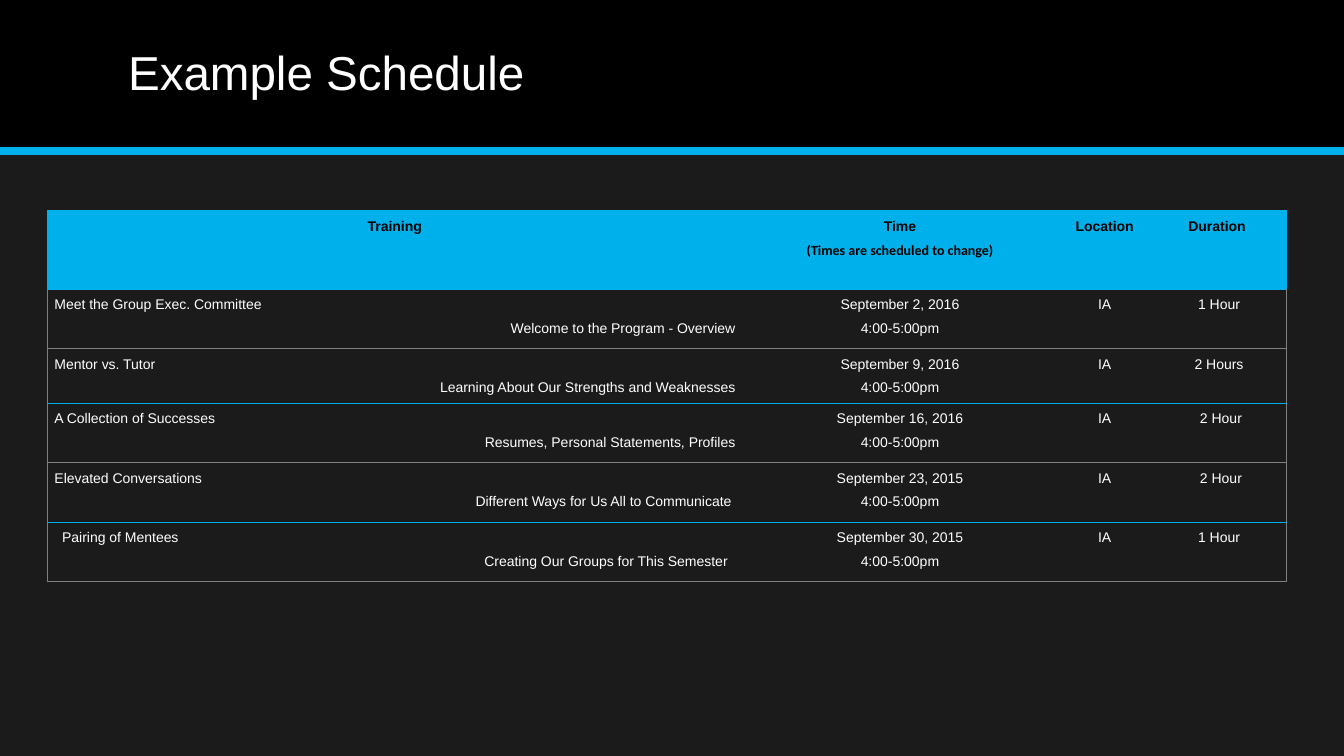
from dataclasses import dataclass

from lxml import etree
from pptx import Presentation, util as u
from pptx.dml.color import RGBColor
from pptx.enum import shapes, text
from pptx.oxml import ns

COLORS = {
    "page": "1B1B1B",
    "band": "000000",
    "accent": "00B0EA",
    "grid": "808080",
    "light": "FFFFFF",
    "dark": "000000",
}
SLIDE_WIDTH, SLIDE_HEIGHT = u.Inches(13.33), u.Inches(7.5)
BAND_HEIGHT = 20  # percent of the slide's height
COLUMN_SHARES = [51.69, 23.48, 6.98, 10.05]  # percent of the slide's width
ROW_SHARES = [10.4, 7.87, 7.2, 7.87, 7.87, 7.87]  # percent of the slide's height
HOURS = "4:00-5:00pm"
HEADINGS = ["Training", "Time\n(Times are scheduled to change)", "Location", "Duration "]
LEFT, CENTER, RIGHT = text.PP_ALIGN.LEFT, text.PP_ALIGN.CENTER, text.PP_ALIGN.RIGHT


@dataclass
class Session:
    name: str
    topic: str
    date: str
    duration: str
    indent: float = 0  # points, on both sides of the training cell

    def cells(self) -> list[str]:
        return [f"{self.name}\n{self.topic}", f"{self.date}\n{HOURS}", "IA", self.duration]


SESSIONS = [
    Session("Meet the Group Exec. Committee", "Welcome to the Program - Overview",
            "September 2, 2016", "1 Hour"),
    Session("Mentor vs. Tutor", "Learning About Our Strengths and Weaknesses",
            "September 9, 2016", "2 Hours"),
    Session("A Collection of Successes", "Resumes, Personal Statements, Profiles",
            "September 16, 2016", " 2 Hour"),
    Session("Elevated Conversations", "Different Ways for Us All to Communicate ",
            "September 23, 2015", " 2 Hour"),
    Session("Pairing of Mentees", "Creating Our Groups for This Semester",
            "September 30, 2015", "1 Hour", indent=5.5),
]


def color(name: str) -> RGBColor:
    return RGBColor.from_string(COLORS[name])


def across(percent: float) -> int:
    return u.Emu(round(SLIDE_WIDTH * percent / 100))


def down(percent: float) -> int:
    return u.Emu(round(SLIDE_HEIGHT * percent / 100))


def style_run(span, size: float, ink: str, bold: bool = False, face: str = "Arial") -> None:
    span.font.size, span.font.bold, span.font.name = u.Pt(size), bold, face
    span.font.color.rgb = color(ink)


def set_borders(cell, edges: dict[str, str]) -> None:
    """Draw the named edges (L, R, T, B) and clear the others."""
    properties = cell._tc.get_or_add_tcPr()
    for position, side in enumerate("LRTB"):
        line = etree.Element(ns.qn(f"a:ln{side}"), w=str(u.Pt(0.5)))
        if side in edges:
            fill = etree.SubElement(line, ns.qn("a:solidFill"))
            etree.SubElement(fill, ns.qn("a:srgbClr"), val=COLORS[edges[side]])
        else:
            etree.SubElement(line, ns.qn("a:noFill"))
        properties.insert(position, line)


def rule_below(row: int) -> str:
    """Rules alternate between the accent and the grid colour."""
    return "accent" if row % 2 == 0 else "grid"


def fill_cell(cell, row: int, column: int, wording: str, indent: float) -> None:
    header = row == 0
    cell.margin_left = cell.margin_right = u.Inches(0.07)
    cell.margin_top = cell.margin_bottom = 0
    cell.text_frame.text = wording
    for index, para in enumerate(cell.text_frame.paragraphs):
        para.line_spacing = 1.5
        para.alignment = CENTER
        if column == 0 and not header:
            para.alignment = (LEFT, RIGHT)[index]
            if indent:
                para._p.get_or_add_pPr().set(("marL", "marR")[index], str(u.Pt(indent)))
        for span in para.runs:
            style_run(span, 10, "dark" if header else "light", header,
                      "Calibri" if header and index else "Arial")

    if header:
        cell.fill.solid()
        cell.fill.fore_color.rgb = color("accent")
    else:
        cell.fill.background()
    edges = {"T": rule_below(max(row - 1, 0)), "B": rule_below(row)}
    side = "accent" if header else "grid"
    if column == 0:
        edges["L"] = side
    if column == len(COLUMN_SHARES) - 1:
        edges["R"] = side
    set_borders(cell, edges)


def add_heading(page) -> None:
    # Band and accent line
    band = page.shapes.add_shape(shapes.MSO_SHAPE.RECTANGLE, 0, 0, SLIDE_WIDTH, down(BAND_HEIGHT))
    band.shadow.inherit = False
    band.fill.solid()
    band.fill.fore_color.rgb = color("band")
    band.line.fill.background()
    rule = page.shapes.add_connector(shapes.MSO_CONNECTOR.STRAIGHT, 0, down(BAND_HEIGHT),
                                     SLIDE_WIDTH, down(BAND_HEIGHT))
    rule.line.color.rgb = color("accent")
    rule.line.width = u.Pt(6)
    etree.SubElement(rule._element.spPr, ns.qn("a:effectLst"))

    # Title, brought in front of the band
    title = page.shapes.title
    title.left, title.top = across(8.78), down(1.87)
    title.width, title.height = across(82.52), down(16)
    frame = title.text_frame
    frame.text = "Example Schedule"
    frame.auto_size = text.MSO_AUTO_SIZE.NONE
    frame.vertical_anchor = text.MSO_ANCHOR.MIDDLE
    para = frame.paragraphs[0]
    para.alignment, para.line_spacing = LEFT, 0.9
    style_run(para.runs[0], 34, "light")
    page.shapes._spTree.append(title._element)


def add_schedule(page) -> None:
    table = page.shapes.add_table(
        len(ROW_SHARES), len(COLUMN_SHARES), across(3.53), down(27.87),
        across(sum(COLUMN_SHARES)), down(sum(ROW_SHARES))).table
    table.horz_banding = False
    for column, share in zip(table.columns, COLUMN_SHARES):
        column.width = across(share)
    for row, share in zip(table.rows, ROW_SHARES):
        row.height = down(share)
    contents = [(HEADINGS, 0)] + [(session.cells(), session.indent) for session in SESSIONS]
    for row, (wordings, indent) in enumerate(contents):
        for column, wording in enumerate(wordings):
            fill_cell(table.cell(row, column), row, column, wording, indent)


def main() -> None:
    deck = Presentation()
    deck.slide_width, deck.slide_height = SLIDE_WIDTH, SLIDE_HEIGHT
    page = deck.slides.add_slide(deck.slide_layouts.get_by_name("Title Only"))
    page.background.fill.solid()
    page.background.fill.fore_color.rgb = color("page")
    add_heading(page)
    add_schedule(page)
    deck.save("out.pptx")


if __name__ == "__main__":
    main()
